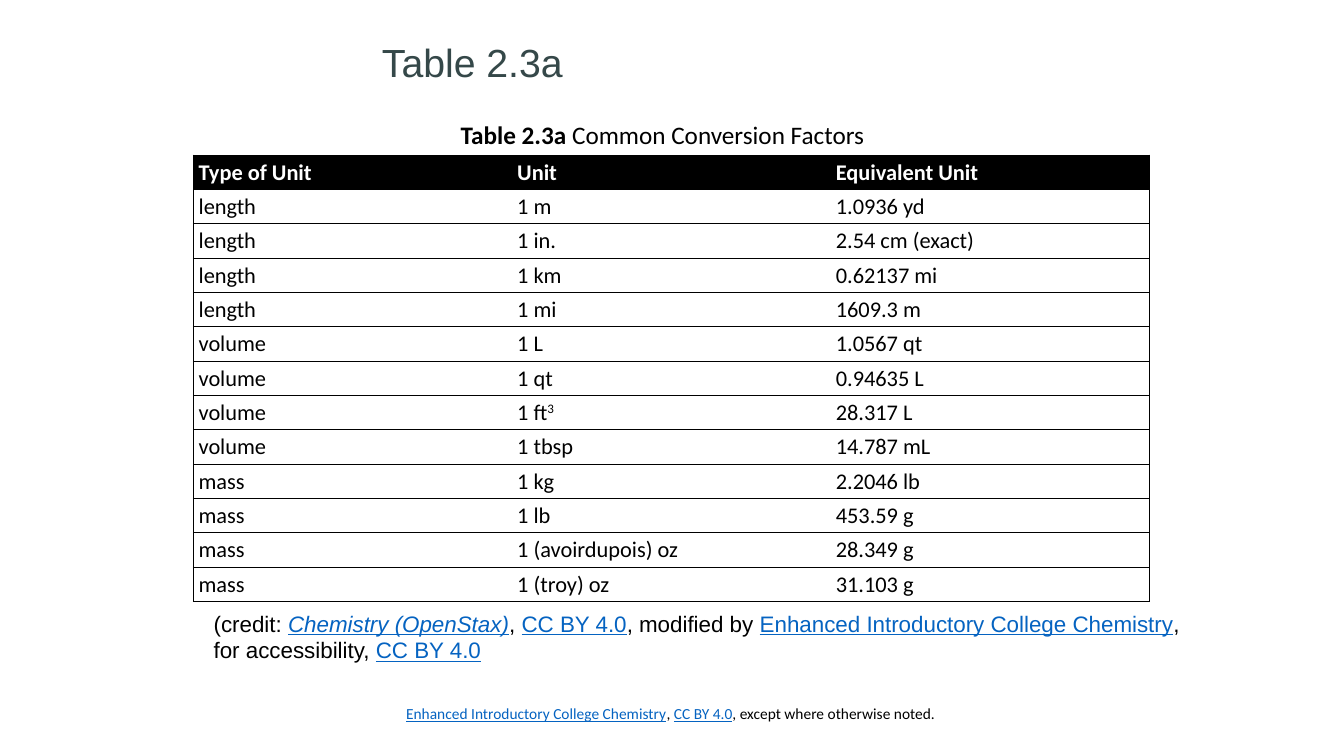
"""Build the slide with the table of common conversion factors."""
from lxml import etree
from pptx import Presentation
from pptx.dml.color import RGBColor
from pptx.enum.text import MSO_ANCHOR
from pptx.oxml.ns import qn
from pptx.util import Inches, Pt

BOTTOM, MIDDLE, TOP = MSO_ANCHOR.BOTTOM, MSO_ANCHOR.MIDDLE, MSO_ANCHOR.TOP
COLORS = {"black": "000000", "white": "FFFFFF", "title": "354849", "link": "0563C1"}
LINK = {"color": "link", "underline": True}
BOOK = "Enhanced Introductory College Chemistry"
LICENSE = "CC BY 4.0"
HEADER = ("Type of Unit", "Unit", "Equivalent Unit")
FACTORS = [
    ("length", "1 m", "1.0936 yd"),
    ("length", "1 in.", "2.54 cm (exact)"),
    ("length", "1 km", "0.62137 mi"),
    ("length", "1 mi", "1609.3 m"),
    ("volume", "1 L", "1.0567 qt"),
    ("volume", "1 qt", "0.94635 L"),
    ("volume", "1 ft^3", "28.317 L"),
    ("volume", "1 tbsp", "14.787 mL"),
    ("mass", "1 kg", "2.2046 lb"),
    ("mass", "1 lb", "453.59 g"),
    ("mass", "1 (avoirdupois) oz", "28.349 g"),
    ("mass", "1 (troy) oz", "31.103 g"),
]


def rgb(name):
    """Return the named colour."""
    return RGBColor.from_string(COLORS[name])


def add_run(p, text, size=16, font="Calibri", color="black", bold=False,
            italic=False, underline=False, superscript=False):
    """Append a formatted run to a paragraph."""
    r = p.add_run()
    r.text = text
    r.font.size, r.font.name = Pt(size), font
    r.font.bold, r.font.italic, r.font.underline = bold, italic, underline
    r.font.color.rgb = rgb(color)
    if superscript:
        r._r.get_or_add_rPr().set("baseline", "30000")


def add_text(s, box, runs, anchor=TOP, line_spacing=None, **base):
    """Add a text box holding one paragraph of (text, format) runs."""
    tf = s.shapes.add_textbox(*map(Inches, box)).text_frame
    tf.word_wrap = True
    tf.vertical_anchor = anchor
    p = tf.paragraphs[0]
    if line_spacing:
        p.line_spacing = line_spacing
    for text, style in runs:
        add_run(p, text, **{**base, **style})


def set_borders(cell, visible):
    """Draw the visible sides of a cell in black and hide the others."""
    tcPr = cell._tc.get_or_add_tcPr()
    for side in "LRTB":
        ln = etree.SubElement(tcPr, qn(f"a:ln{side}"), w=str(Pt(1)))
        if side in visible:
            fill = etree.SubElement(ln, qn("a:solidFill"))
            etree.SubElement(fill, qn("a:srgbClr"), val=COLORS["black"])
        else:
            etree.SubElement(ln, qn("a:noFill"))


def fill_cell(cell, text, visible, header):
    """Fill a table cell; text after a caret becomes superscript."""
    cell.margin_left = cell.margin_right = Inches(0.05)
    cell.margin_top = cell.margin_bottom = Inches(0.02)
    cell.vertical_anchor = MIDDLE
    set_borders(cell, visible)
    cell.fill.solid()
    cell.fill.fore_color.rgb = rgb("black" if header else "white")
    p = cell.text_frame.paragraphs[0]
    for i, part in enumerate(text.split("^")):
        add_run(p, part, color="white" if header else "black",
                bold=header, superscript=i > 0)


def add_factor_table(s, box):
    """Add the table of conversion factors with an outer frame and row rules."""
    rows = [HEADER, *FACTORS]
    last = len(HEADER) - 1
    table = s.shapes.add_table(len(rows), len(HEADER), *map(Inches, box)).table
    table.horz_banding = False
    for i, row in enumerate(rows):
        for j, text in enumerate(row):
            visible = "TB" + ("L" if j == 0 else "") + ("R" if j == last else "")
            fill_cell(table.cell(i, j), text, visible, header=i == 0)


def main():
    """Build and save the slide."""
    prs = Presentation()
    prs.slide_width, prs.slide_height = Inches(13.33), Inches(7.5)
    s = prs.slides.add_slide(prs.slide_layouts[6])
    add_text(s, (3.93, 6.94, 7.07, 0.4),
             [(BOOK, LINK), (", ", {}), (LICENSE, LINK),
              (", except where otherwise noted.", {})], size=11)
    add_text(s, (3.69, 0.2, 4.3, 0.7), [("Table 2.3a", {})], anchor=BOTTOM,
             line_spacing=0.9, size=28, font="Arial", color="title")
    add_text(s, (4.47, 1.13, 4.39, 0.4),
             [("Table 2.3a", {"bold": True}), (" Common Conversion Factors", {})],
             size=18)
    add_factor_table(s, (1.92, 1.54, 9.48, 4.43))
    add_text(s, (2.02, 6, 9.92, 0.64),
             [("(credit: ", {}), ("Chemistry (OpenStax)", {**LINK, "italic": True}),
              (", ", {}), (LICENSE, LINK), (", modified by ", {}), (BOOK, LINK),
              (", for accessibility, ", {}), (LICENSE, LINK)], font="Arial")
    prs.save("out.pptx")


if __name__ == "__main__":
    main()
